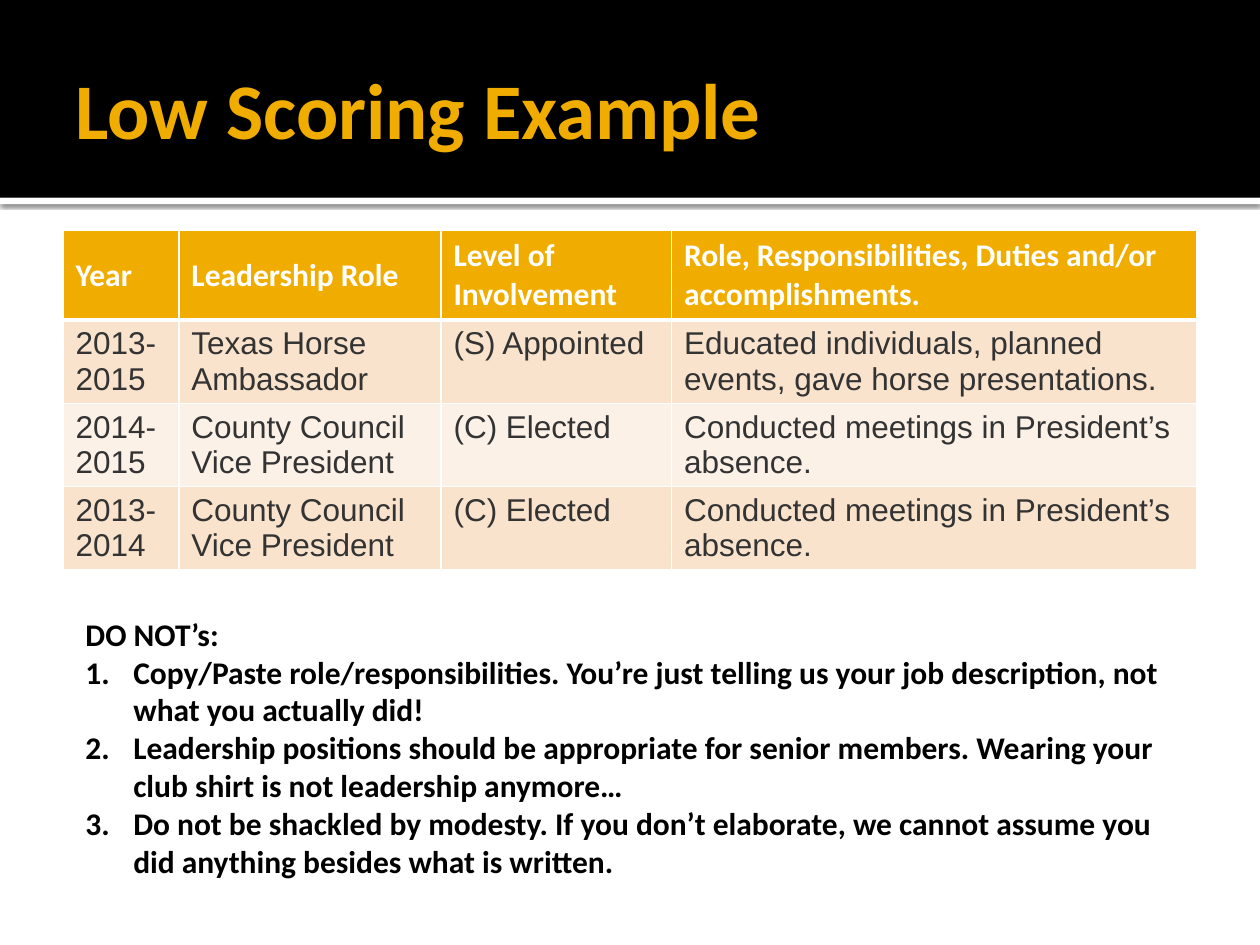
from lxml.etree import SubElement
from pptx import Presentation
from pptx.dml.color import RGBColor
from pptx.enum.shapes import MSO_SHAPE
from pptx.enum.text import MSO_ANCHOR, PP_ALIGN
from pptx.oxml import parse_xml
from pptx.oxml.ns import nsdecls, qn
from pptx.util import Inches, Pt

COLORS = {
    "gold": "F0AD00",
    "black": "000000",
    "white": "FFFFFF",
    "body": "333333",
    "band_dark": "F9E3CC",
    "band_light": "FCF1E7",
}
COLUMN_WIDTHS = [0.92, 2.08, 1.83, 4.17]
HEADER_HEIGHT, ROW_HEIGHT = 0.7, 0.66
ROLES = [
    ["Year", "Leadership Role", "Level of Involvement",
     "Role, Responsibilities, Duties and/or accomplishments."],
    ["2013-2015", "Texas Horse Ambassador", "(S) Appointed",
     "Educated individuals, planned events, gave horse presentations."],
    ["2014-2015", "County Council Vice President", "(C) Elected",
     "Conducted meetings in President’s absence."],
    ["2013-2014", "County Council Vice President", "(C) Elected",
     "Conducted meetings in President’s absence."],
]
ADVICE_HEADING = "DO NOT’s:"
ADVICE = [
    "Copy/Paste role/responsibilities. You’re just telling us your job description, "
    "not what you actually did!",
    "Leadership positions should be appropriate for senior members. Wearing your "
    "club shirt is not leadership anymore…",
    "Do not be shackled by modesty. If you don’t elaborate, we cannot assume you "
    "did anything besides what is written.",
]


def rgb(name):
    """Return the named colour."""
    return RGBColor.from_string(COLORS[name])


def format_paragraph(para, size, color, font="Calibri", bold=True):
    """Format every run of a paragraph."""
    for span in para.runs:
        span.font.size = Pt(size)
        span.font.name = font
        span.font.bold = bold
        span.font.color.rgb = rgb(color)


def add_band(page, box, color):
    """Add a plain filled rectangle without a line."""
    band = page.shapes.add_shape(MSO_SHAPE.RECTANGLE, *map(Inches, box))
    band.shadow.inherit = False
    band.fill.solid()
    band.fill.fore_color.rgb = rgb(color)
    band.line.fill.background()
    return band


def add_soft_shadow(shape):
    """Give a shape a soft shadow that falls straight down."""
    effects = shape._element.spPr.find(qn("a:effectLst"))
    effects.append(parse_xml(
        f'<a:outerShdw {nsdecls("a")} blurRad="{Pt(2.5)}" dist="{Pt(0.8)}" '
        f'dir="5400000" algn="tl" rotWithShape="0">'
        f'<a:srgbClr val="{COLORS["black"]}"><a:alpha val="60000"/></a:srgbClr>'
        f'</a:outerShdw>'))


def add_header(page, box, text):
    """Draw the black header with its edge strip and place the title on it."""
    left, top, width, height = box
    strip = add_band(page, (left, top + height, width, 0.05), "white")
    add_soft_shadow(strip)
    add_band(page, box, "black")

    title = page.shapes.title
    page.shapes._spTree.append(title._element)
    title.left, title.top = Inches(left + 0.5), Inches(top + 0.17)
    title.width, title.height = Inches(width - 1), Inches(1.37)
    frame = title.text_frame
    frame.text = text
    frame.word_wrap = True
    frame.vertical_anchor = MSO_ANCHOR.MIDDLE
    frame.margin_left = Inches(0.1)
    frame.margin_right = frame.margin_top = frame.margin_bottom = Inches(0.05)
    para = frame.paragraphs[0]
    para.alignment = PP_ALIGN.LEFT
    format_paragraph(para, 45, "gold")


def add_cell_borders(cell, widths):
    """Draw white cell borders ahead of the fill, one width per side."""
    properties = cell._tc.get_or_add_tcPr()
    for index, (side, width) in enumerate(widths.items()):
        properties.insert(index, parse_xml(
            f'<a:{side} {nsdecls("a")} w="{Pt(width)}"><a:solidFill>'
            f'<a:srgbClr val="{COLORS["white"]}"/></a:solidFill></a:{side}>'))


def fill_cell(cell, text, row):
    """Write and style one cell according to its row."""
    is_header = row == 0
    cell.text = text
    cell.fill.solid()
    if is_header:
        fill = "gold"
        cell.vertical_anchor = MSO_ANCHOR.MIDDLE
        format_paragraph(cell.text_frame.paragraphs[0], 18, "white")
    else:
        fill = "band_dark" if row % 2 else "band_light"
        format_paragraph(cell.text_frame.paragraphs[0], 18, "body", "Arial", False)
    cell.fill.fore_color.rgb = rgb(fill)
    add_cell_borders(cell, {
        "lnL": 1, "lnR": 1,
        "lnT": 3 if row == 1 else 1,
        "lnB": 3 if is_header else 1,
    })


def add_role_table(page, box):
    """Add the table of leadership roles."""
    frame = page.shapes.add_table(len(ROLES), len(COLUMN_WIDTHS), *map(Inches, box))
    table = frame.table
    for column, width in zip(table.columns, COLUMN_WIDTHS):
        column.width = Inches(width)
    for row, texts in enumerate(ROLES):
        table.rows[row].height = Inches(ROW_HEIGHT if row else HEADER_HEIGHT)
        for column, text in enumerate(texts):
            fill_cell(table.cell(row, column), text, row)


def number_paragraph(para):
    """Number a paragraph with a hanging indent."""
    properties = para._p.get_or_add_pPr()
    properties.set("marL", str(Inches(0.38)))
    properties.set("indent", str(-Inches(0.38)))
    SubElement(properties, qn("a:buFont"), typeface="+mj-lt")
    SubElement(properties, qn("a:buAutoNum"), type="arabicPeriod")


def add_advice(page, box):
    """Add the heading and the numbered list of things to avoid."""
    frame = page.shapes.add_textbox(*map(Inches, box)).text_frame
    frame.word_wrap = True
    frame.text = "\n".join([ADVICE_HEADING, *ADVICE])
    for para in frame.paragraphs:
        format_paragraph(para, 18, "black")
    for para in frame.paragraphs[1:]:
        number_paragraph(para)


def main():
    """Build the deck and save it."""
    deck = Presentation()
    deck.slide_width, deck.slide_height = Inches(10), Inches(7.5)
    page = deck.slides.add_slide(deck.slide_layouts[5])
    add_header(page, (0, 0, 10, 1.57), "Low Scoring Example")
    add_role_table(page, (0.5, 1.83, 9, HEADER_HEIGHT + 3 * ROW_HEIGHT))
    add_advice(page, (0.58, 4.83, 9, 2.3))
    deck.save("out.pptx")


if __name__ == "__main__":
    main()
